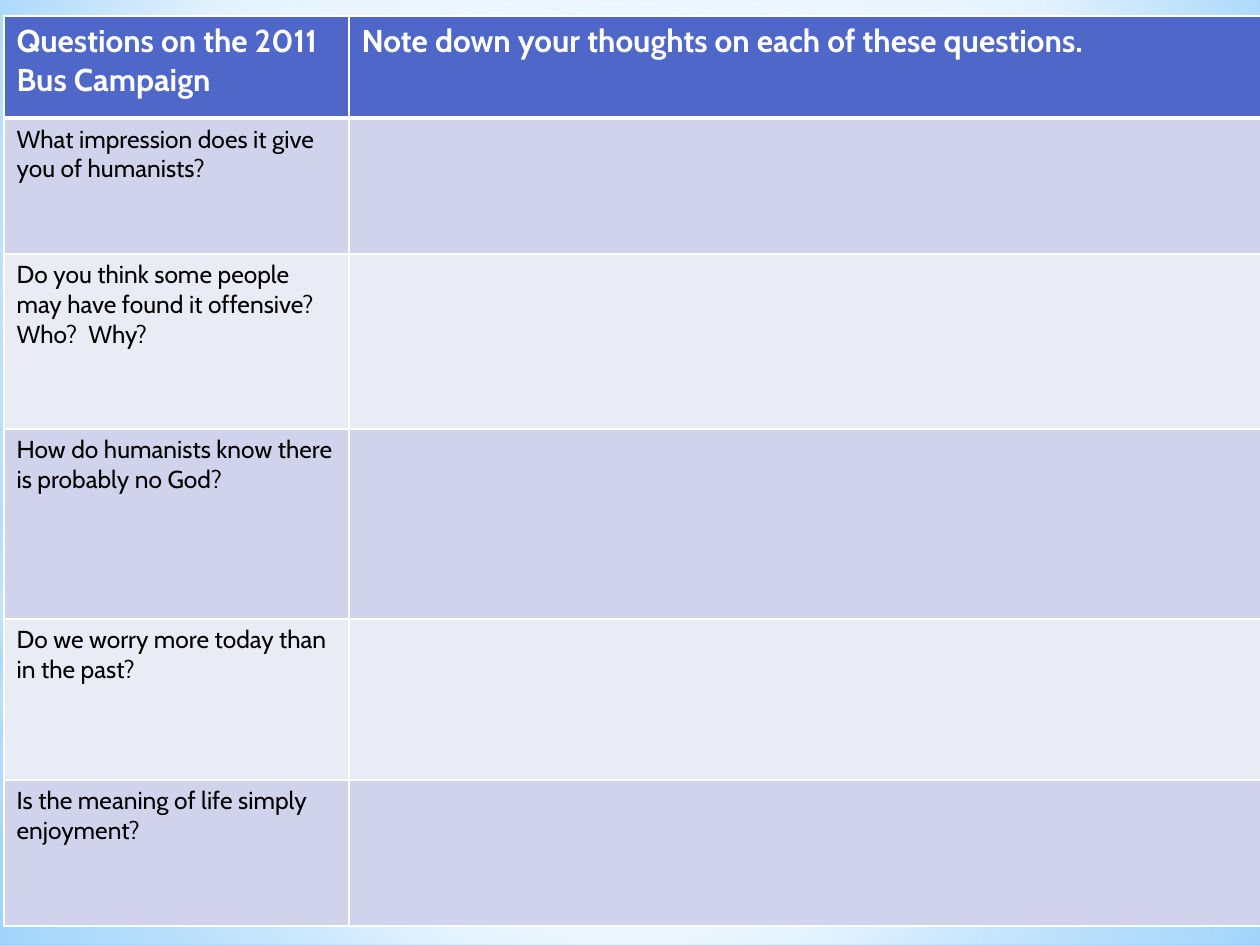
from dataclasses import dataclass

from lxml.etree import SubElement
from pptx import Presentation
from pptx.dml.color import RGBColor
from pptx.enum.shapes import MSO_SHAPE
from pptx.oxml.ns import qn
from pptx.util import Pt

PX = 914400 / 126  # EMU in one px


@dataclass(frozen=True)
class Theme:
    font: str = "Cabin"
    heading_size: int = 18
    question_size: int = 14
    white: str = "FFFFFF"
    black: str = "000000"
    header: str = "4E67C8"
    bands: tuple = ("D0D3EB", "E9EBF5")
    haze: str = "B4DCFA"
    sky: str = "9ED5FF"
    deep_sky: str = "5BB9FF"


THEME = Theme()
CENTRE = (50, 50, 50, 50)
HEADINGS = ("Questions on the 2011 Bus Campaign",
            "Note down your thoughts on each of these questions.")
QUESTIONS = (
    "What impression does it give you of humanists?",
    "Do you think some people may have found it offensive? Who?  Why?",
    "How do humanists know there is probably no God?",
    "Do we worry more today than in the past?",
    "Is the meaning of life simply enjoyment?",
)
COLUMN_WIDTHS = (345, 912)
ROW_HEIGHTS = (102, 136, 175, 190, 161, 146)


def emu(*lengths):
    return [round(length * PX) for length in lengths]


def set_gradient(fill, element, stops, focus=None, angle=90):
    """Stops are (position %, colour, opacity %); a focus makes it circular."""
    fill.gradient()
    gradient = element.find(".//" + qn("a:gradFill"))
    for child in list(gradient):
        gradient.remove(child)
    stop_list = SubElement(gradient, qn("a:gsLst"))
    for position, color, opacity in stops:
        stop = SubElement(stop_list, qn("a:gs"), pos=str(position * 1000))
        color_node = SubElement(stop, qn("a:srgbClr"), val=color)
        SubElement(color_node, qn("a:alpha"), val=str(opacity * 1000))
    if focus:
        circle = SubElement(gradient, qn("a:path"), path="circle")
        sides = {side: str(value * 1000) for side, value in zip("ltrb", focus)}
        SubElement(circle, qn("a:fillToRect"), **sides)
    else:
        SubElement(gradient, qn("a:lin"), ang=str(angle * 60000), scaled="0")


def add_glow(slide, kind, box, stops, focus=None):
    shape = slide.shapes.add_shape(kind, *emu(*box))
    shape.shadow.inherit = False
    shape.line.fill.background()
    set_gradient(shape.fill, shape.element, stops, focus)


def add_backdrop(slide, box):
    left, top, width, height = box
    white, haze = THEME.white, THEME.haze
    horizon = 703

    # Sky
    set_gradient(slide.background.fill, slide.element,
                 [(0, THEME.sky, 100), (60, white, 100), (100, THEME.deep_sky, 100)],
                 (20, 10, 20, 60))
    # Ground and upper haze
    add_glow(slide, MSO_SHAPE.RECTANGLE, (left, top + horizon, width, height - horizon),
             [(0, white, 91), (37, white, 76), (100, haze, 79)], CENTRE)
    add_glow(slide, MSO_SHAPE.RECTANGLE, (left, top, width, horizon),
             [(0, white, 89), (48, white, 62), (100, haze, 79)], CENTRE)
    # Horizon band
    add_glow(slide, MSO_SHAPE.RECTANGLE, (left, top + 519, width, 315),
             [(0, white, 0), (29, white, 30), (45, haze, 40),
              (55, white, 26), (65, haze, 60), (100, white, 0)])
    # Central light
    add_glow(slide, MSO_SHAPE.OVAL, (left, top + 221, width, horizon),
             [(0, white, 100), (56, white, 0)], CENTRE)


def set_borders(cell, bottom_width):
    properties = cell._tc.get_or_add_tcPr()
    widths = {"a:lnL": 1, "a:lnR": 1, "a:lnT": 1, "a:lnB": bottom_width}
    for index, (tag, width) in enumerate(widths.items()):
        line = SubElement(properties, qn(tag), w=str(Pt(width)))
        fill = SubElement(line, qn("a:solidFill"))
        SubElement(fill, qn("a:srgbClr"), val=THEME.white)
        properties.insert(index, line)  # borders come before the fill


def style_cell(cell, text, color, fill, size, bold, bottom_width):
    cell.fill.solid()
    cell.fill.fore_color.rgb = RGBColor.from_string(fill)
    set_borders(cell, bottom_width)
    cell.text = text
    font = cell.text_frame.paragraphs[0].font
    font.name, font.size, font.bold = THEME.font, Pt(size), bold
    font.color.rgb = RGBColor.from_string(color)


def add_question_table(slide, box):
    rows = [HEADINGS] + [(question, "") for question in QUESTIONS]
    table = slide.shapes.add_table(len(rows), len(HEADINGS), *emu(*box)).table
    for column, width in zip(table.columns, emu(*COLUMN_WIDTHS)):
        column.width = width
    for row, height in zip(table.rows, emu(*ROW_HEIGHTS)):
        row.height = height

    for row_index, texts in enumerate(rows):
        if row_index == 0:
            style = (THEME.white, THEME.header, THEME.heading_size, True, 3)
        else:
            band = THEME.bands[(row_index - 1) % 2]
            style = (THEME.black, band, THEME.question_size, False, 1)
        for column_index, text in enumerate(texts):
            style_cell(table.cell(row_index, column_index), text, *style)


def main():
    presentation = Presentation()
    presentation.slide_width, presentation.slide_height = emu(1260, 945)
    slide = presentation.slides.add_slide(presentation.slide_layouts[6])
    add_backdrop(slide, (0, 0, 1260, 945))
    add_question_table(slide, (4, 16, sum(COLUMN_WIDTHS), sum(ROW_HEIGHTS)))
    presentation.save("out.pptx")


if __name__ == "__main__":
    main()
